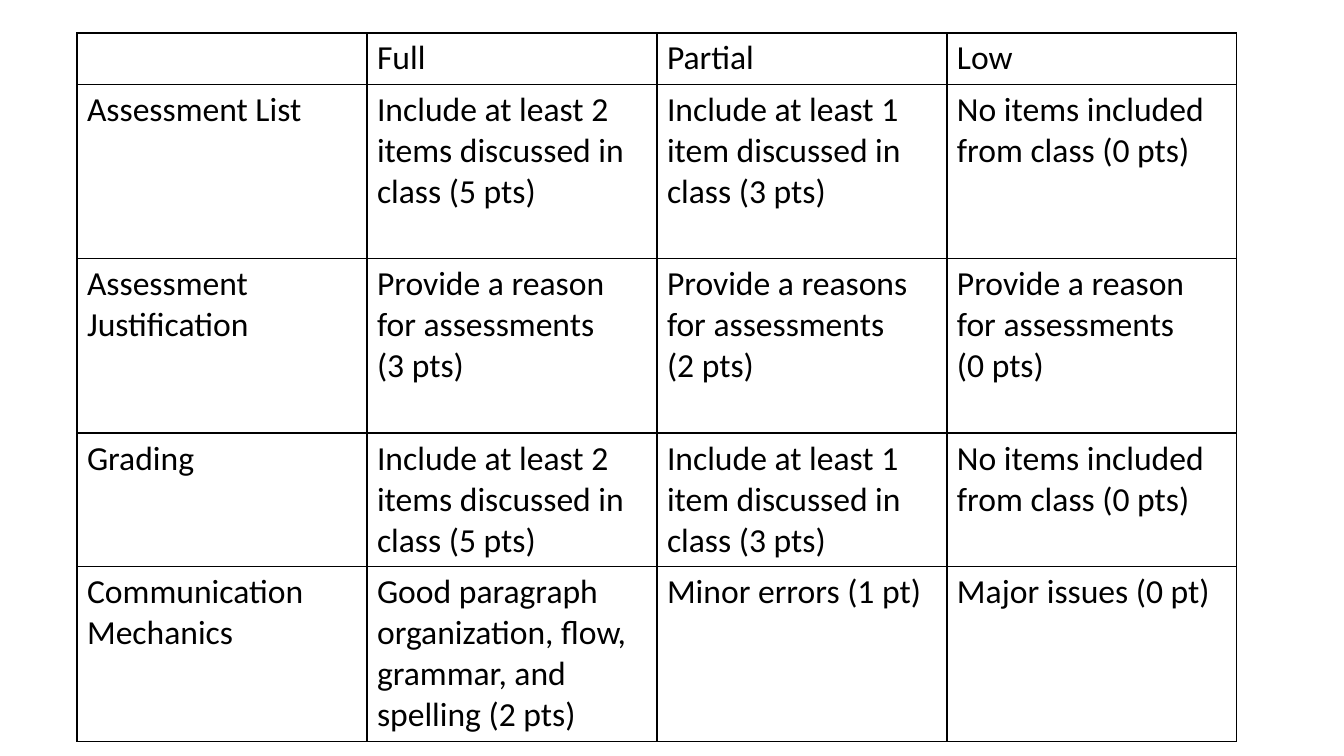
from lxml import etree
from pptx import Presentation, util as u
from pptx.dml.color import RGBColor
from pptx.oxml import ns

PX = 914400 / 100.8
BLACK = RGBColor(0x00, 0x00, 0x00)
FONT = "Calibri"

LEFT, TOP, COLUMN_WIDTH = 77, 33, 290
ROW_HEIGHTS = [50, 174, 175, 133, 175]

ITEMS = [
    "Include at least 2 items discussed in class (5 pts)",
    "Include at least 1 item discussed in class (3 pts)",
    "No items included from class (0 pts)",
]
RUBRIC = [
    ["", "Full", "Partial", "Low"],
    ["Assessment List", *ITEMS],
    ["Assessment Justification",
     "Provide a reason for assessments\n(3 pts)",
     "Provide a reasons for assessments \n(2 pts)",
     "Provide a reason for assessments \n(0 pts)"],
    ["Grading", *ITEMS],
    ["Communication Mechanics",
     "Good paragraph organization, flow, grammar, and spelling (2 pts)",
     "Minor errors (1 pt)",
     "Major issues (0 pt)"],
]


def px(n):
    return u.Emu(round(n * PX))


def set_borders(cell, color, width):
    tc_pr = cell._tc.get_or_add_tcPr()
    for i, side in enumerate(("lnL", "lnR", "lnT", "lnB")):
        ln = etree.Element(ns.qn(f"a:{side}"), w=str(width))
        fill = etree.SubElement(ln, ns.qn("a:solidFill"))
        etree.SubElement(fill, ns.qn("a:srgbClr"), val=str(color))
        tc_pr.insert(i, ln)  # borders come before the fill


def fill_cell(cell, words):
    cell.fill.background()
    set_borders(cell, BLACK, u.Pt(1))
    p = cell.text_frame.paragraphs[0]
    p.text = words  # a newline becomes a line break
    p.font.name = FONT
    p.font.size = u.Pt(24)
    p.font.bold = False
    p.font.color.rgb = BLACK


def add_rubric(s, rows):
    columns = len(rows[0])
    frame = s.shapes.add_table(len(rows), columns, px(LEFT), px(TOP),
                               px(columns * COLUMN_WIDTH), px(sum(ROW_HEIGHTS)))
    table = frame.table
    table.first_row = table.horz_banding = False
    for column in table.columns:
        column.width = px(COLUMN_WIDTH)
    for r, (height, row) in enumerate(zip(ROW_HEIGHTS, rows)):
        table.rows[r].height = px(height)
        for c, words in enumerate(row):
            fill_cell(table.cell(r, c), words)


def main():
    prs = Presentation()
    prs.slide_width, prs.slide_height = px(1344), px(756)
    s = prs.slides.add_slide(prs.slide_layouts[6])

    # Grading rubric
    add_rubric(s, RUBRIC)

    prs.save("out.pptx")


if __name__ == "__main__":
    main()
